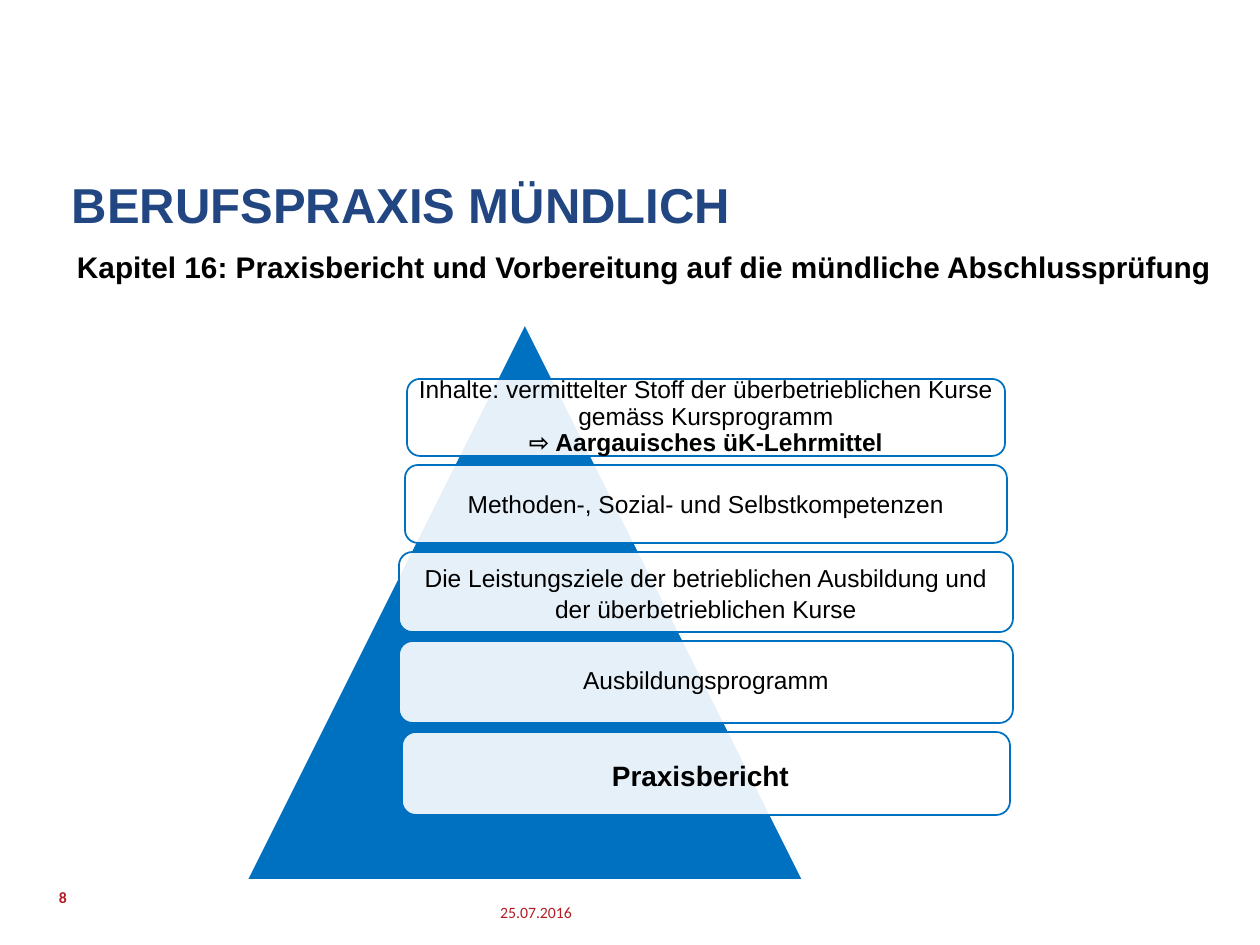
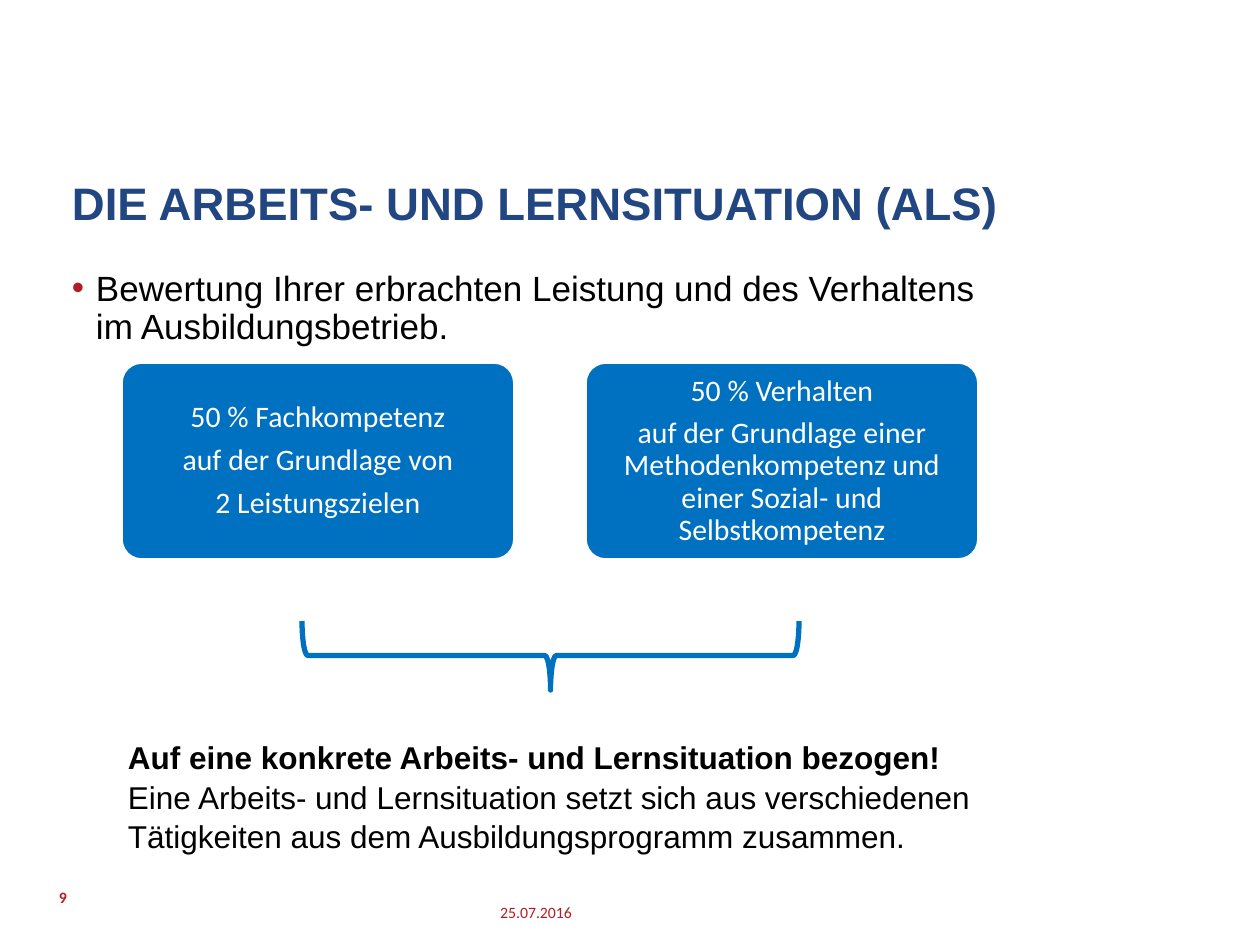
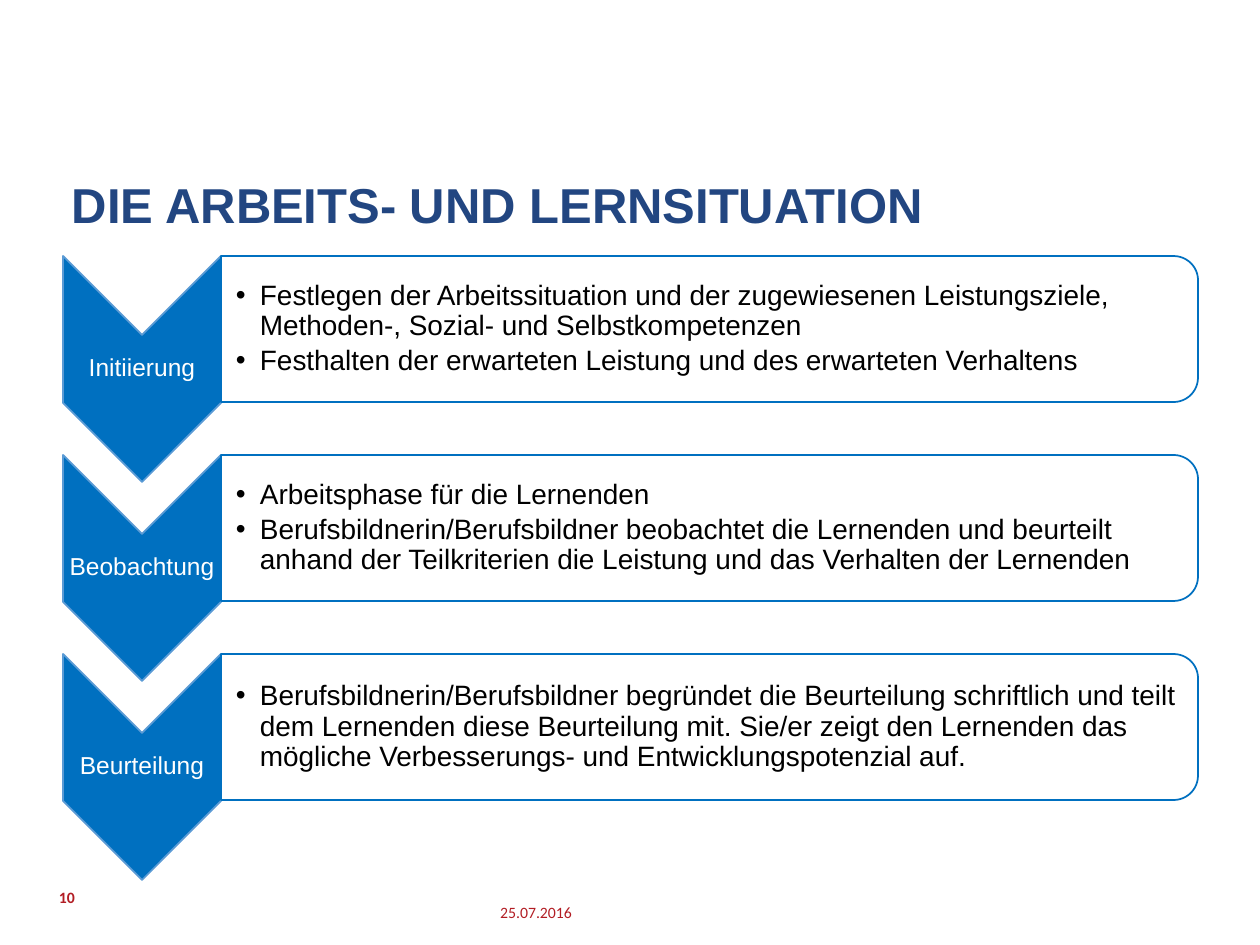
import dataclasses

import pptx
import pptx.dml.color
import pptx.enum.shapes
import pptx.enum.text
import pptx.oxml
import pptx.oxml.ns
import pptx.util
from lxml import etree

EMU_PER_PX = 914400 / 126
COLORS = {
    "white": "FFFFFF",
    "black": "000000",
    "title": "224681",
    "blue": "0070C0",
    "edge": "5B9BD5",
    "red": "B21D24",
}
DATE = "25.07.2016"
TITLE_BOX = (59, 175, 963, 118)
SHAPES = pptx.enum.shapes.MSO_SHAPE
ALIGN = pptx.enum.text.PP_ALIGN
ANCHOR = pptx.enum.text.MSO_ANCHOR
HANGING = 24


@dataclasses.dataclass
class Style:
    size: int
    color: str = "black"
    bold: bool = False
    font: str = "Arial"
    align: int = ALIGN.LEFT
    spacing: float = 0.9
    after: float = 0
    bullet: str = ""


LEVEL = Style(14, align=ALIGN.CENTER)
CARD = Style(17, "white", font="Calibri", align=ALIGN.CENTER, after=6)
PHASE = Style(14, "white", align=ALIGN.CENTER)
PHASE_POINT = Style(16, after=2.5, bullet="black")


def px(length):
    return pptx.util.Emu(round(length * EMU_PER_PX))


def rgb(name):
    return pptx.dml.color.RGBColor.from_string(COLORS[name])


def set_bullet(paragraph, color):
    """Give the paragraph a coloured bullet with a hanging indent."""
    props = paragraph._p.get_or_add_pPr()
    props.set("marL", str(px(HANGING)))
    props.set("indent", str(-px(HANGING)))
    tag = pptx.oxml.ns.qn
    bullet_color = etree.SubElement(props, tag("a:buClr"))
    etree.SubElement(bullet_color, tag("a:srgbClr"), val=COLORS[color])
    etree.SubElement(props, tag("a:buFont"), typeface="Arial")
    etree.SubElement(props, tag("a:buChar"), char="•")


def write(shape, paragraphs, style, insets=(13, 6, 13, 6), anchor=ANCHOR.TOP):
    """Each paragraph is a string or a list of (text, bold); "\\n" breaks the line."""
    frame = shape.text_frame
    frame.word_wrap = True
    frame.auto_size = pptx.enum.text.MSO_AUTO_SIZE.NONE
    frame.vertical_anchor = anchor
    (frame.margin_left, frame.margin_top,
     frame.margin_right, frame.margin_bottom) = map(px, insets)
    for index, content in enumerate(paragraphs):
        paragraph = frame.add_paragraph() if index else frame.paragraphs[0]
        if style.bullet:
            set_bullet(paragraph, style.bullet)
        paragraph.alignment = style.align
        paragraph.line_spacing = style.spacing
        paragraph.space_before = pptx.util.Pt(0)
        paragraph.space_after = pptx.util.Pt(style.after)
        runs = [(content, style.bold)] if isinstance(content, str) else content
        for text, bold in runs:
            if text == "\n":
                paragraph.add_line_break()
                continue
            run = paragraph.add_run()
            run.text = text
            run.font.name = style.font
            run.font.size = pptx.util.Pt(style.size)
            run.font.bold = bold
            run.font.color.rgb = rgb(style.color)


def add_text(slide, box, paragraphs, style, **layout):
    write(slide.shapes.add_textbox(*map(px, box)), paragraphs, style, **layout)


def add_figure(slide, kind, box, fill, line, weight=1, alpha=None):
    figure = slide.shapes.add_shape(kind, *map(px, box))
    figure.shadow.inherit = False
    if fill:
        figure.fill.solid()
        figure.fill.fore_color.rgb = rgb(fill)
    else:
        figure.fill.background()
    if alpha:
        color = figure._element.spPr.find(pptx.oxml.ns.qn("a:solidFill"))[0]
        etree.SubElement(color, pptx.oxml.ns.qn("a:alpha"), val=str(alpha * 1000))
    figure.line.color.rgb = rgb(line)
    figure.line.width = pptx.util.Pt(weight)
    return figure


def add_turned(slide, kind, box, *look, **options):
    """Place a figure turned by 90 degrees so that it covers the given box."""
    left, top, width, height = box
    shift = (width - height) / 2
    unturned = (left + shift, top - shift, height, width)
    figure = add_figure(slide, kind, unturned, *look, **options)
    figure.rotation = 90


def place(placeholder, box):
    (placeholder.left, placeholder.top,
     placeholder.width, placeholder.height) = map(px, box)


def add_slide(deck, layout, title, number, title_size=28):
    slide = deck.slides.add_slide(deck.slide_layouts[layout])
    place(slide.shapes.title, TITLE_BOX)
    write(slide.shapes.title, [title], Style(title_size, "title", bold=True))
    # Footer
    plain = {"insets": (0, 0, 0, 0), "anchor": ANCHOR.MIDDLE}
    add_text(slide, (362, 887, 210, 50), [DATE],
             Style(9, "red", font="Calibri", align=ALIGN.RIGHT, spacing=1), **plain)
    add_text(slide, (59, 872, 284, 50), [str(number)],
             Style(9, "red", True, "Calibri", spacing=1), **plain)
    return slide


def build_oral_exam(deck):
    slide = add_slide(deck, 5, "BERUFSPRAXIS MÜNDLICH", 8)
    chapter = "Kapitel 16: Praxisbericht und Vorbereitung auf die mündliche Abschlussprüfung"
    add_text(slide, (64, 243, 1171, 49), [chapter], Style(17, bold=True, spacing=1))

    # Pyramid and its levels: width, height, text, style, insets
    add_figure(slide, SHAPES.ISOSCELES_TRIANGLE, (247, 324, 556, 556), "blue", "white")
    even = (8, 8, 8, 8)
    course_content = [
        ("Inhalte: vermittelter Stoff der überbetrieblichen Kurse gemäss Kursprogramm", False),
        ("\n", False),
        ("⇨ Aargauisches üK-Lehrmittel", True),
    ]
    goals = "Die Leistungsziele der betrieblichen Ausbildung und der überbetrieblichen Kurse"
    levels = [
        (598, 77, course_content, LEVEL, even),
        (602, 78, "Methoden-, Sozial- und Selbstkompetenzen", LEVEL, (8, 12, 8, 8)),
        (614, 80, goals, dataclasses.replace(LEVEL, spacing=1.07), even),
        (614, 82, "Ausbildungsprogramm", LEVEL, even),
        (608, 83, "Praxisbericht", dataclasses.replace(LEVEL, size=16, bold=True),
         (9, 16, 20, 9)),
    ]
    center, top, gap = 706, 379, 9
    for width, height, text, style, insets in levels:
        level = add_figure(slide, SHAPES.ROUNDED_RECTANGLE,
                           (center - width / 2, top, width, height),
                           "white", "blue", alpha=90)
        write(level, [text], style, insets=insets, anchor=ANCHOR.MIDDLE)
        top += height + gap


def build_assessment(deck):
    slide = add_slide(deck, 1, "DIE ARBEITS- UND LERNSITUATION (ALS)", 9, title_size=26)
    rating = slide.placeholders[1]
    place(rating, (59, 265, 963, 387))
    write(rating,
          ["Bewertung Ihrer erbrachten Leistung und des Verhaltens im Ausbildungsbetrieb."],
          Style(20, bullet="red"))

    # The two halves of the grade
    halves = [
        ["50 % Fachkompetenz", "auf der Grundlage von", "2 Leistungszielen"],
        ["50 % Verhalten",
         "auf der Grundlage einer Methodenkompetenz und einer Sozial- und Selbstkompetenz"],
    ]
    for index, lines in enumerate(halves):
        half = add_figure(slide, SHAPES.ROUNDED_RECTANGLE,
                          (122 + index * 464, 363, 392, 196), "blue", "white")
        half.adjustments[0] = 0.1
        write(half, lines, CARD, insets=(5, 3, 5, 3), anchor=ANCHOR.MIDDLE)

    # Brace leading to the conclusion
    add_turned(slide, SHAPES.RIGHT_BRACE, (302, 621, 497, 69), None, "blue", weight=3)
    conclusion = [
        [("Auf eine konkrete Arbeits- und Lernsituation bezogen!", True)],
        "Eine Arbeits- und Lernsituation setzt sich aus verschiedenen Tätigkeiten "
        "aus dem Ausbildungsprogramm zusammen.",
    ]
    add_text(slide, (115, 731, 992, 127), conclusion, Style(18, spacing=1.04))


def build_phases(deck):
    slide = add_slide(deck, 5, "DIE ARBEITS- UND LERNSITUATION", 10)
    phases = [
        ("Initiierung", [
            "Festlegen der Arbeitssituation und der zugewiesenen Leistungsziele, "
            "Methoden-, Sozial- und Selbstkompetenzen",
            "Festhalten der erwarteten Leistung und des erwarteten Verhaltens",
        ]),
        ("Beobachtung", [
            "Arbeitsphase für die Lernenden",
            "Berufsbildnerin/Berufsbildner beobachtet die Lernenden und beurteilt anhand "
            "der Teilkriterien die Leistung und das Verhalten der Lernenden",
        ]),
        ("Beurteilung", [
            "Berufsbildnerin/Berufsbildner begründet die Beurteilung schriftlich und teilt "
            "dem Lernenden diese Beurteilung mit. Sie/er zeigt den Lernenden das mögliche "
            "Verbesserungs- und Entwicklungspotenzial auf.",
        ]),
    ]
    for index, (phase, points) in enumerate(phases):
        top = 256 + index * 199
        add_turned(slide, SHAPES.CHEVRON, (63, top, 158, 226), "blue", "edge")
        add_text(slide, (63, top + 79, 158, 68), [phase], PHASE,
                 insets=(1, 1, 1, 1), anchor=ANCHOR.MIDDLE)
        add_turned(slide, SHAPES.ROUND_2_SAME_RECTANGLE, (221, top, 977, 146),
                   "white", "blue", alpha=90)
        add_text(slide, (221, top + 7, 969, 132), points, PHASE_POINT,
                 insets=(15, 1, 1, 1), anchor=ANCHOR.MIDDLE)


def main():
    deck = pptx.Presentation()
    deck.slide_width = px(1260)
    deck.slide_height = px(945)
    build_oral_exam(deck)
    build_assessment(deck)
    build_phases(deck)
    deck.save("out.pptx")


if __name__ == "__main__":
    main()
